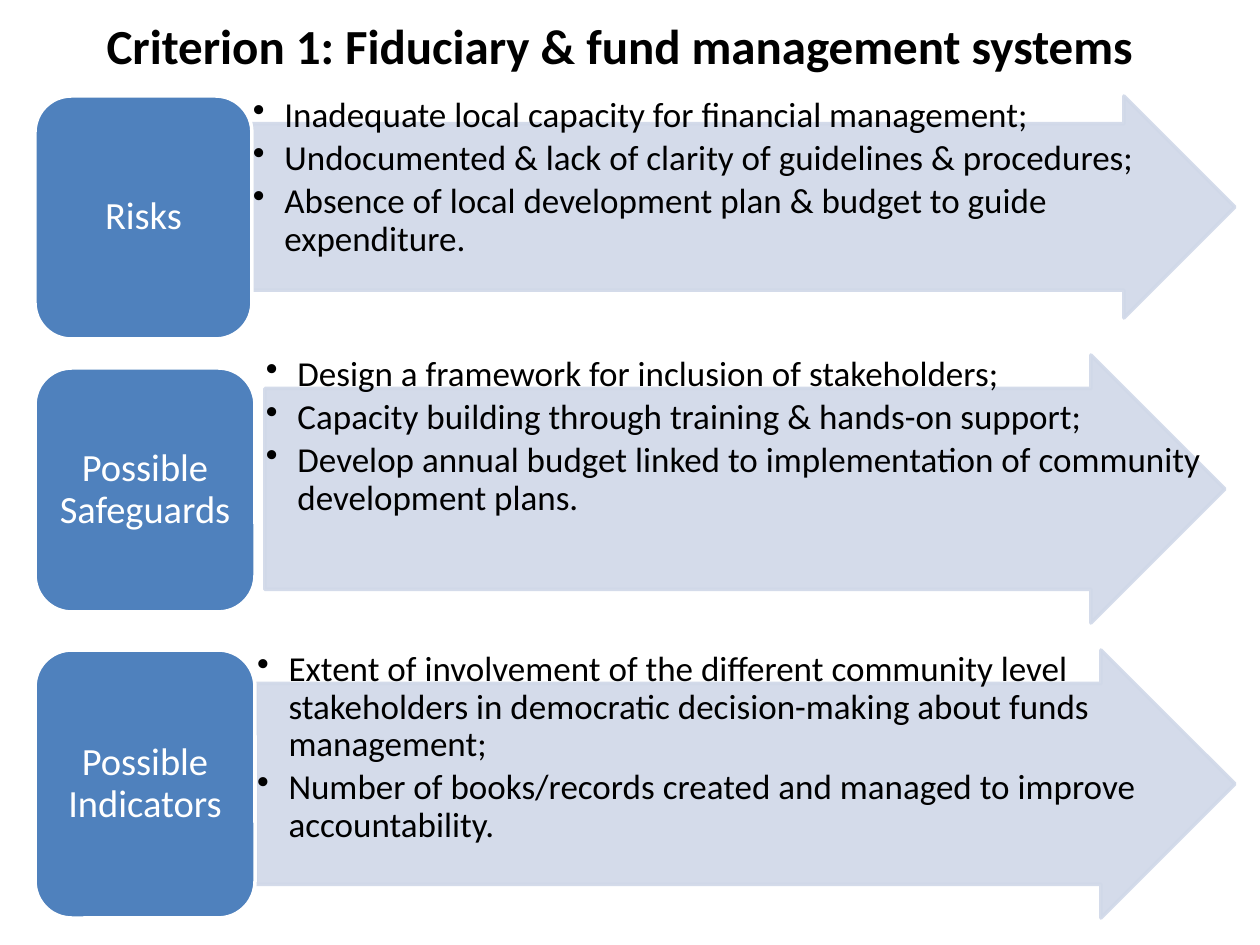
import pptx
import pptx.dml.color
import pptx.enum.shapes
import pptx.enum.text
import pptx.oxml.ns
import pptx.util
from lxml import etree

EMU_PER_PX = 914400 / 126
SHAPES = pptx.enum.shapes.MSO_SHAPE
ALIGN = pptx.enum.text.PP_ALIGN
ANCHOR = pptx.enum.text.MSO_ANCHOR

ROWS = [
    {
        "label": "Risks",
        "label_at": (35, 96, 217, 243),
        "arrow_at": (252, 96, 983, 222),
        "points": [
            "Inadequate local capacity for financial management;",
            "Undocumented & lack of clarity of guidelines & procedures;",
            "Absence of local development plan & budget to guide expenditure.",
        ],
    },
    {
        "label": "Possible Safeguards",
        "label_at": (35, 368, 220, 244),
        "arrow_at": (265, 355, 960, 268),
        "points": [
            "Design a framework for inclusion of stakeholders;",
            "Capacity building through training & hands-on support;",
            "Develop annual budget linked to implementation of community development plans.",
        ],
    },
    {
        "label": "Possible Indicators",
        "label_at": (35, 650, 220, 268),
        "arrow_at": (256, 650, 979, 268),
        "points": [
            "Extent of involvement of the different community level stakeholders "
            "in democratic decision-making about funds management;",
            "Number of books/records created and managed to improve accountability.",
        ],
    },
]


def px(length):
    """Turn whole pixels into EMU."""
    return pptx.util.Emu(round(length * EMU_PER_PX))


def colour(value):
    """Turn a hex string into a colour."""
    return pptx.dml.color.RGBColor.from_string(value)


def add_xml(parent, tag, **values):
    """Append a drawing element with its attributes."""
    element = etree.SubElement(parent, pptx.oxml.ns.qn(tag))
    for name, value in values.items():
        element.set(name, value)
    return element


def set_values(target, values):
    """Set attributes of an object from a dict."""
    for name, value in values.items():
        setattr(target, name, value)


class CriterionSlide:
    """Style and current slide of the criterion chart."""

    font = "Calibri"
    dark, light = "4F81BD", "D0D8E8"
    black, white = "000000", "FFFFFF"

    def __init__(self, page):
        """Keep the page to draw on."""
        self.page = page

    def add_text(self, shape, lines, size, ink, inset=0, frame_format=None,
                 para_format=None, bold=False):
        """Put paragraphs into a shape and return them."""
        frame = shape.text_frame
        margins = ("margin_left", "margin_top", "margin_right", "margin_bottom")
        set_values(frame, dict.fromkeys(margins, px(inset)))
        set_values(frame, {"word_wrap": True, **(frame_format or {})})
        frame.text = "\n".join(lines)
        for para in frame.paragraphs:
            set_values(para, para_format or {})
            for span in para.runs:
                set_values(span.font, {"name": self.font, "bold": bold,
                                       "size": pptx.util.Pt(size)})
                span.font.color.rgb = colour(ink)
        return frame.paragraphs

    def block(self, kind, at, fill, line, opacity=None):
        """Draw a filled preset shape with an outline."""
        shape = self.page.shapes.add_shape(kind, *map(px, at))
        shape.shadow.inherit = False
        shape.fill.solid()
        shape.fill.fore_color.rgb = colour(fill)
        shape.line.color.rgb = colour(line)
        shape.line.width = pptx.util.Pt(2)
        if opacity:
            for tint in shape.element.spPr.iter(pptx.oxml.ns.qn("a:srgbClr")):
                add_xml(tint, "a:alpha", val=str(opacity * 1000))
        return shape

    def title(self, text, at):
        """Add the heading."""
        box = self.page.shapes.add_textbox(*map(px, at))
        self.add_text(box, [text], 28, self.black, bold=True,
                      frame_format={"vertical_anchor": ANCHOR.MIDDLE},
                      para_format={"alignment": ALIGN.CENTER})

    def arrow(self, at):
        """Draw a pale arrow."""
        arrow = self.block(SHAPES.RIGHT_ARROW, at, self.light, self.light, 90)
        arrow.adjustments[0], arrow.adjustments[1] = 0.75, 0.5

    def bullets(self, points, at):
        """Add a bulleted list."""
        box = self.page.shapes.add_textbox(*map(px, at))
        paras = self.add_text(box, points, 20, self.black, inset=1,
                              para_format={"level": 1, "line_spacing": 0.9,
                                           "space_after": pptx.util.Pt(3)})
        indent = pptx.util.Inches(0.25)
        for para in paras:
            properties = para._p.get_or_add_pPr()
            properties.set("marL", str(indent))
            properties.set("indent", str(-indent))
            add_xml(properties, "a:buChar", char="•")

    def label(self, text, at):
        """Draw a rounded label."""
        box = self.block(SHAPES.ROUNDED_RECTANGLE, at, self.dark, self.white)
        self.add_text(box, [text], 22, self.white, inset=6,
                      frame_format={"vertical_anchor": ANCHOR.MIDDLE},
                      para_format={"alignment": ALIGN.CENTER, "line_spacing": 0.9})


def main():
    """Build and save the deck."""
    deck = pptx.Presentation()
    deck.slide_width, deck.slide_height = px(1260), px(945)
    slide = CriterionSlide(deck.slides.add_slide(deck.slide_layouts[6]))
    slide.title("Criterion 1: Fiduciary & fund management systems", (63, 6, 1113, 77))
    for row in ROWS:
        slide.arrow(row["arrow_at"])
        slide.bullets(row["points"], row["arrow_at"])
        slide.label(row["label"], row["label_at"])
    deck.save("out.pptx")


if __name__ == "__main__":
    main()
